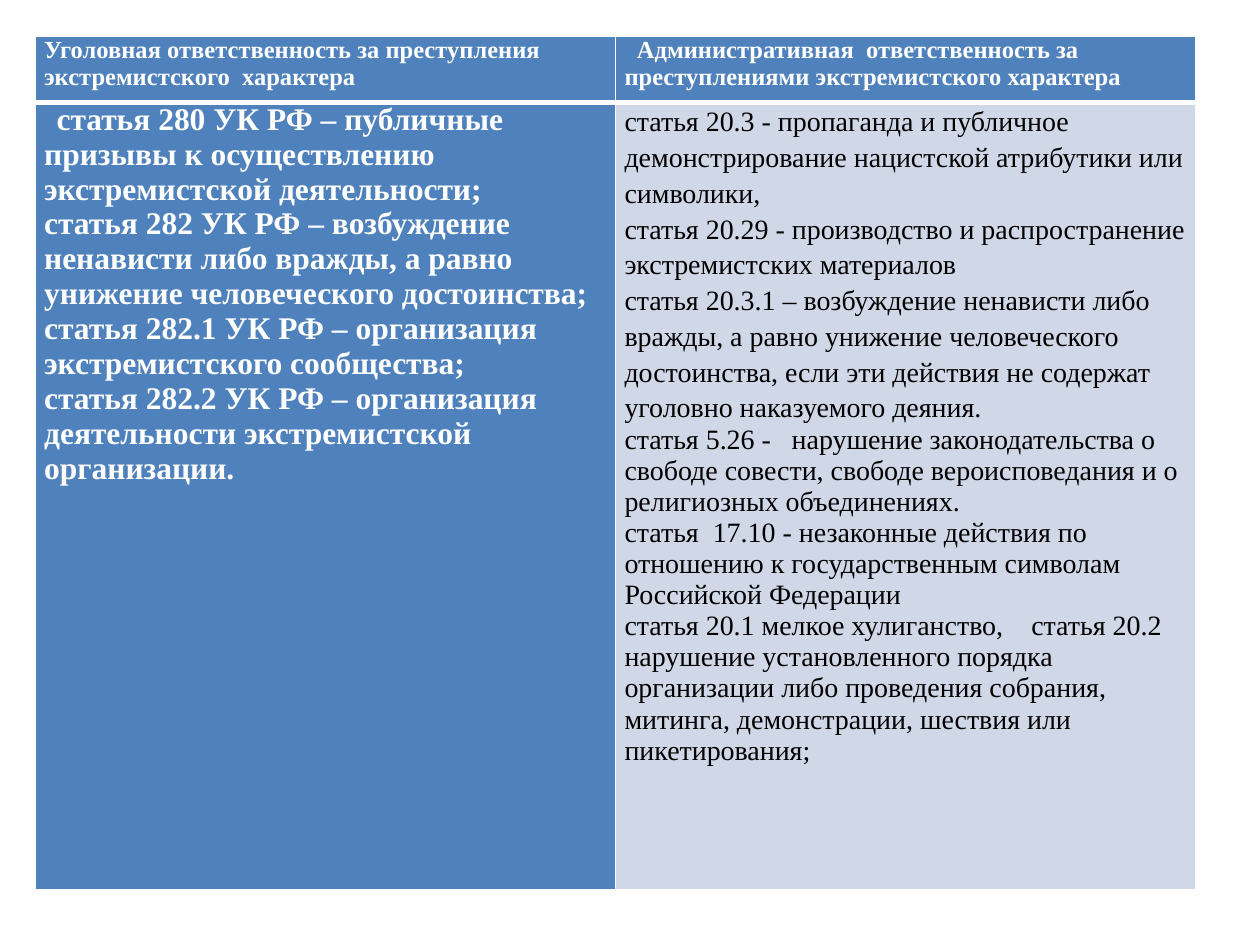
from lxml import etree
from pptx import Presentation
from pptx import util as u
from pptx.dml.color import RGBColor
from pptx.enum import text
from pptx.oxml import ns

WHITE, BLACK, BLUE, PALE = "FFFFFF", "000000", "4F81BD", "D0D8E8"


def tint(code):
    return RGBColor.from_string(code)


def put(obj, vals):
    for key, val in vals.items():
        setattr(obj, key, val)


def node(root, tag, **vals):
    return etree.SubElement(root, ns.qn(tag), vals)


class Deck:
    face = "Times New Roman"

    def __init__(self, wide, high):
        self.prs = Presentation()
        put(self.prs, {"slide_width": u.Cm(wide), "slide_height": u.Cm(high)})
        self.slide = self.prs.slides.add_slide(self.prs.slide_layouts[6])

    def grid(self, left, top, cols, rows):
        box = [u.Cm(v) for v in (left, top, sum(cols), sum(rows))]
        tab = self.slide.shapes.add_table(len(rows), len(cols), *box).table
        put(tab, {"first_row": False, "horz_banding": False})
        for col, wide in zip(tab.columns, cols):
            col.width = u.Cm(wide)
        for row, high in zip(tab.rows, rows):
            row.height = u.Cm(high)
        return tab

    def edge(self, cell, widths):
        pr = cell._tc.get_or_add_tcPr()
        for side, pts in zip("LRTB", widths):
            line = node(pr, f"a:ln{side}", w=str(u.Pt(pts)))
            node(node(line, "a:solidFill"), "a:srgbClr", val=WHITE)

    def cell(self, cell, fill, widths, paras, **look):
        put(cell, {"margin_left": u.Cm(0.18), "margin_right": u.Cm(0.18),
                   "margin_top": 0, "margin_bottom": 0,
                   "vertical_anchor": text.MSO_ANCHOR.TOP})
        self.edge(cell, widths)
        cell.fill.solid()
        cell.fill.fore_color.rgb = tint(fill)
        frame = cell.text_frame
        for i, (words, form) in enumerate(paras):
            para = frame.add_paragraph() if i else frame.paragraphs[0]
            self.para(para, words, look, **form)

    def para(self, para, words, look, space=1.0, indent=0, stop=0):
        para.line_spacing = space
        pr = para._p.get_or_add_pPr()
        if indent:
            pr.set("indent", str(u.Cm(indent)))
        if stop:
            node(node(pr, "a:tabLst"), "a:tab", pos=str(u.Cm(stop)), algn="l")
        run = para.add_run()
        run.text = words
        put(run.font, {"name": self.face, "size": u.Pt(look["size"]),
                       "bold": look["bold"]})
        run.font.color.rgb = tint(look["ink"])


def main():
    deck = Deck(25.4, 19.05)
    tab = deck.grid(0.71, 0.74, [11.7] * 2, [1.32, 15.88])
    loose = {"space": 1.15}
    lead = {"indent": 0.25}

    # Headings
    heads = [
        ("Уголовная ответственность за преступления экстремистского  характера", {}),
        ("Административная  ответственность за преступлениями экстремистского характера", lead),
    ]
    for col, head in enumerate(heads):
        deck.cell(tab.cell(0, col), BLUE, (1, 1, 1, 3), [head],
                  size=14, bold=True, ink=WHITE)

    # Criminal articles
    crimes = [
        ("статья 280 УК РФ – публичные призывы к осуществлению экстремистской деятельности;", lead),
        ("статья 282 УК РФ – возбуждение ненависти либо вражды, а равно унижение человеческого достоинства;", {}),
        ("статья 282.1 УК РФ – организация экстремистского сообщества;", {}),
        ("статья 282.2 УК РФ – организация деятельности экстремистской организации.", {}),
    ]
    deck.cell(tab.cell(1, 0), BLUE, (1, 1, 3, 1), crimes,
              size=18, bold=True, ink=WHITE)

    # Administrative articles
    faults = [
        ("статья 20.3 - пропаганда и публичное демонстрирование нацистской атрибутики или символики,", loose),
        ("статья 20.29 - производство и распространение экстремистских материалов", loose),
        ("статья 20.3.1 – возбуждение ненависти либо вражды, а равно унижение человеческого достоинства, "
         "если эти действия не содержат уголовно наказуемого деяния.", loose),
        ("статья 5.26 -\tнарушение законодательства о свободе совести, свободе вероисповедания "
         "и о религиозных объединениях.", {"stop": 3.37}),
        ("статья  17.10 - незаконные действия по отношению к государственным символам Российской Федерации", {}),
        ("статья 20.1 мелкое хулиганство,\tстатья 20.2 нарушение установленного порядка организации "
         "либо проведения собрания, митинга, демонстрации, шествия или пикетирования;", {"stop": 8.2}),
    ]
    deck.cell(tab.cell(1, 1), PALE, (1, 1, 3, 1), faults,
              size=16, bold=False, ink=BLACK)

    deck.prs.save("out.pptx")


if __name__ == "__main__":
    main()
